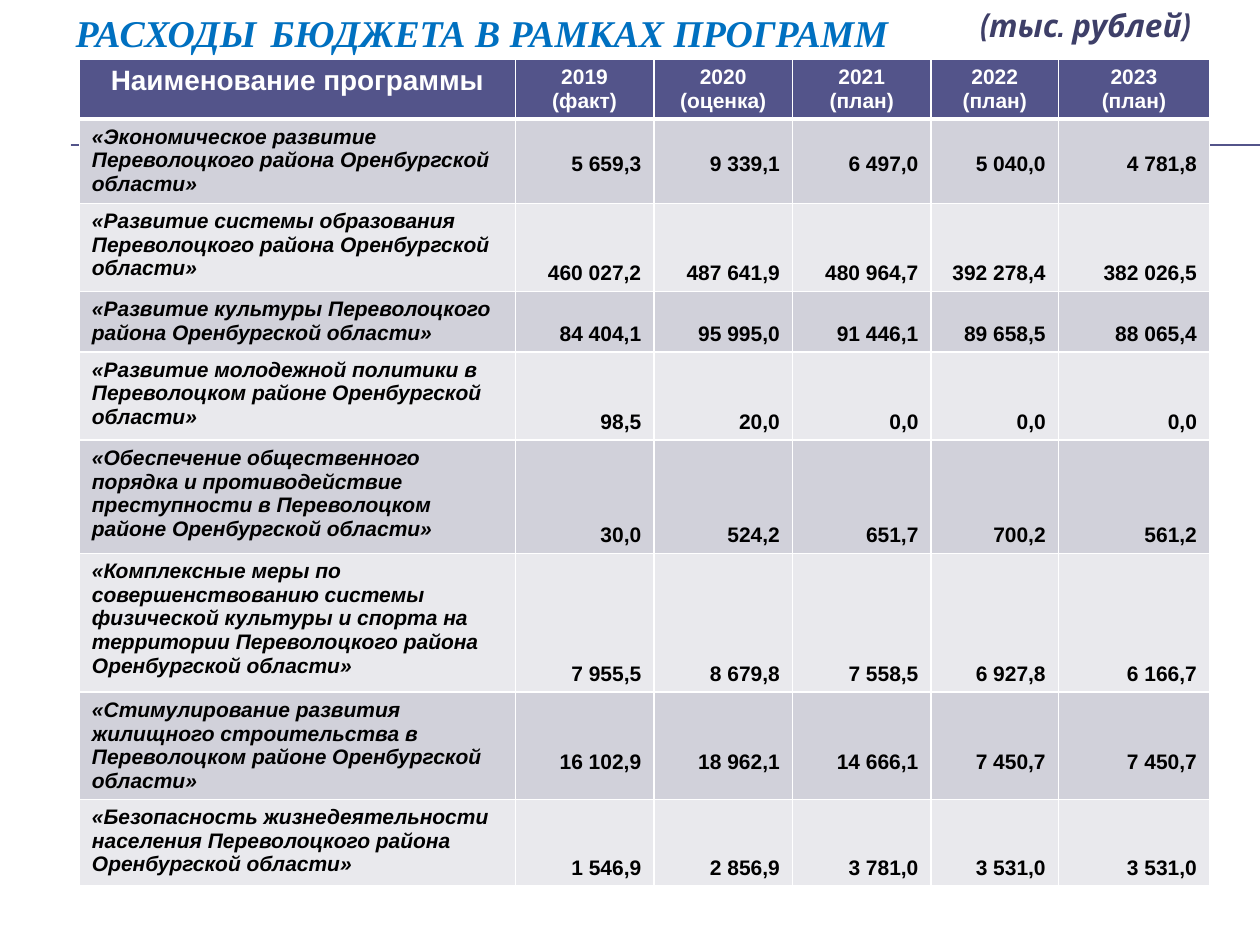
from dataclasses import dataclass

import lxml.etree
import pptx
import pptx.dml.color
import pptx.enum.shapes
import pptx.enum.text
import pptx.oxml.ns
import pptx.util

ALIGN = pptx.enum.text.PP_ALIGN
ANCHOR = pptx.enum.text.MSO_ANCHOR
Inches = pptx.util.Inches
qn = pptx.oxml.ns.qn


@dataclass(frozen=True)
class Theme:
    header: str = "53548A"
    bands: tuple[str, str] = ("D1D1DA", "E9E9ED")
    white: str = "FFFFFF"
    ink: str = "000000"
    title: str = "0070C0"
    units: str = "3E3F68"
    serif: str = "Times New Roman"
    sans: str = "Arial"
    accent: str = "Cabin"
    title_size: float = 21.6
    gap_size: float = 32.4
    units_size: float = 18
    heading_size: float = 16
    cell_size: float = 12


@dataclass(frozen=True)
class Program:
    name: str
    amounts: tuple[float, ...]
    height: float
    bottom: float = 0.05  # space under the amounts


THEME = Theme()
WIDTH, HEIGHT = 10, 7.5
TABLE_LEFT, TABLE_TOP = 0.63, 0.47
COLUMNS = (3.46, 1.1, 1.1, 1.1, 1.01, 1.2)
HEADER_HEIGHT = 0.46
HEADINGS = ("Наименование программы", "2019\n(факт)", "2020\n(оценка)",
            "2021\n(план)", "2022\n(план)", "2023\n(план)")
PROGRAMS = (
    Program("«Экономическое развитие Переволоцкого района Оренбургской области»",
            (5659.3, 9339.1, 6497.0, 5040.0, 4781.8), 0.67, 0.22),
    Program("«Развитие системы образования Переволоцкого района Оренбургской области»",
            (460027.2, 487641.9, 480964.7, 392278.4, 382026.5), 0.7),
    Program("«Развитие культуры Переволоцкого района Оренбургской области»",
            (84404.1, 95995.0, 91446.1, 89658.5, 88065.4), 0.48),
    Program("«Развитие молодежной политики в Переволоцком районе Оренбургской области»",
            (98.5, 20.0, 0.0, 0.0, 0.0), 0.7),
    Program("«Обеспечение общественного порядка и противодействие преступности "
            "в Переволоцком районе Оренбургской области»",
            (30.0, 524.2, 651.7, 700.2, 561.2), 0.9),
    Program("«Комплексные меры по совершенствованию системы физической культуры и спорта "
            "на территории Переволоцкого района Оренбургской области»",
            (7955.5, 8679.8, 7558.5, 6927.8, 6166.7), 1.1),
    Program("«Стимулирование развития жилищного строительства в Переволоцком районе "
            "Оренбургской области»",
            (16102.9, 18962.1, 14666.1, 7450.7, 7450.7), 0.85, 0.2),
    Program("«Безопасность жизнедеятельности населения Переволоцкого района "
            "Оренбургской области»",
            (1546.9, 2856.9, 3781.0, 3531.0, 3531.0), 0.69),
)


def rgb(colour: str):
    return pptx.dml.color.RGBColor.from_string(colour)


def write(para, text: str, *, size: float, font: str, colour: str,
          italic: bool = False, align=ALIGN.LEFT) -> None:
    """Add one bold span of text to a paragraph."""
    para.alignment = align
    span = para.add_run()
    span.text = text
    span.font.size = pptx.util.Pt(size)
    span.font.name = font
    span.font.bold = True
    span.font.italic = italic
    span.font.color.rgb = rgb(colour)


def draw_rule(page, share: float) -> None:
    """Draw a thin line from the left margin to the right edge."""
    y = Inches(HEIGHT * share)
    rule = page.shapes.add_connector(pptx.enum.shapes.MSO_CONNECTOR.STRAIGHT,
                                     Inches(WIDTH * 0.056), y, Inches(WIDTH), y)
    rule.line.color.rgb = rgb(THEME.header)
    rule.line.width = pptx.util.Pt(0.75)
    lxml.etree.SubElement(rule._element.spPr, qn("a:effectLst"))


def set_borders(cell, bottom: float = 1, top: float = 1) -> None:
    """Give a cell white borders, placed before its fill as the schema asks."""
    properties = cell._tc.get_or_add_tcPr()
    widths = {"lnL": 1, "lnR": 1, "lnT": top, "lnB": bottom}
    for index, (side, points) in enumerate(widths.items()):
        line = lxml.etree.Element(qn(f"a:{side}"), w=str(pptx.util.Pt(points)))
        fill = lxml.etree.SubElement(line, qn("a:solidFill"))
        lxml.etree.SubElement(fill, qn("a:srgbClr"), val=THEME.white)
        properties.insert(index, line)


def fill_cell(cell, text: str, *, fill: str, colour: str = THEME.ink,
              size: float = THEME.cell_size, italic: bool = False,
              align=ALIGN.LEFT, anchor=ANCHOR.TOP, bottom: float = 0.05) -> None:
    cell.fill.solid()
    cell.fill.fore_color.rgb = rgb(fill)
    cell.vertical_anchor = anchor
    cell.margin_bottom = Inches(bottom)
    frame = cell.text_frame
    for index, line in enumerate(text.split("\n")):
        para = frame.add_paragraph() if index else frame.paragraphs[0]
        write(para, line, size=size, font=THEME.sans, colour=colour,
              italic=italic, align=align)


def draw_title(page) -> None:
    box = page.shapes.title
    box.left, box.top = Inches(WIDTH * 0.05), 0
    box.width, box.height = Inches(WIDTH * 0.9), Inches(0.4)
    frame = box.text_frame
    frame.auto_size = pptx.enum.text.MSO_AUTO_SIZE.NONE
    frame.vertical_anchor = ANCHOR.MIDDLE
    for text, size in (("РАСХОДЫ", THEME.title_size), (" ", THEME.gap_size),
                       ("БЮДЖЕТА В РАМКАХ ПРОГРАММ", THEME.title_size)):
        write(frame.paragraphs[0], text, size=size, font=THEME.serif,
              colour=THEME.title, italic=True)


def draw_units(page) -> None:
    box = page.shapes.add_textbox(Inches(7.44), 0, Inches(2.56), Inches(0.4))
    frame = box.text_frame
    frame.word_wrap = True
    frame.margin_left = Inches(0.34)
    write(frame.paragraphs[0], "(тыс. рублей)", size=THEME.units_size,
          font=THEME.accent, colour=THEME.units, italic=True)


def draw_table(page) -> None:
    heights = [HEADER_HEIGHT, *(program.height for program in PROGRAMS)]
    table = page.shapes.add_table(
        len(heights), len(COLUMNS), Inches(TABLE_LEFT), Inches(TABLE_TOP),
        Inches(sum(COLUMNS)), Inches(sum(heights))).table
    for column, width in zip(table.columns, COLUMNS):
        column.width = Inches(width)
    for row, height in zip(table.rows, heights):
        row.height = Inches(height)

    # Header row
    for column, heading in enumerate(HEADINGS):
        cell = table.cell(0, column)
        fill_cell(cell, heading, fill=THEME.header, colour=THEME.white, align=ALIGN.CENTER,
                  size=THEME.cell_size if column else THEME.heading_size)
        set_borders(cell, bottom=3)

    # One banded row for each program
    for row, program in enumerate(PROGRAMS, start=1):
        band = THEME.bands[(row - 1) % 2]
        fill_cell(table.cell(row, 0), program.name, fill=band, italic=True)
        for column, amount in enumerate(program.amounts, start=1):
            fill_cell(table.cell(row, column), f"{amount:,.1f}".replace(",", " ").replace(".", ","),
                      fill=band, align=ALIGN.RIGHT, anchor=ANCHOR.BOTTOM, bottom=program.bottom)
        for column in range(len(COLUMNS)):
            set_borders(table.cell(row, column), top=3 if row == 1 else 1)


def main() -> None:
    deck = pptx.Presentation()
    deck.slide_width, deck.slide_height = Inches(WIDTH), Inches(HEIGHT)
    page = deck.slides.add_slide(deck.slide_layouts[5])
    # Double rule behind the table
    for share in (0.153, 0.154):
        draw_rule(page, share)
    draw_title(page)
    draw_table(page)
    draw_units(page)
    deck.save("out.pptx")


if __name__ == "__main__":
    main()
